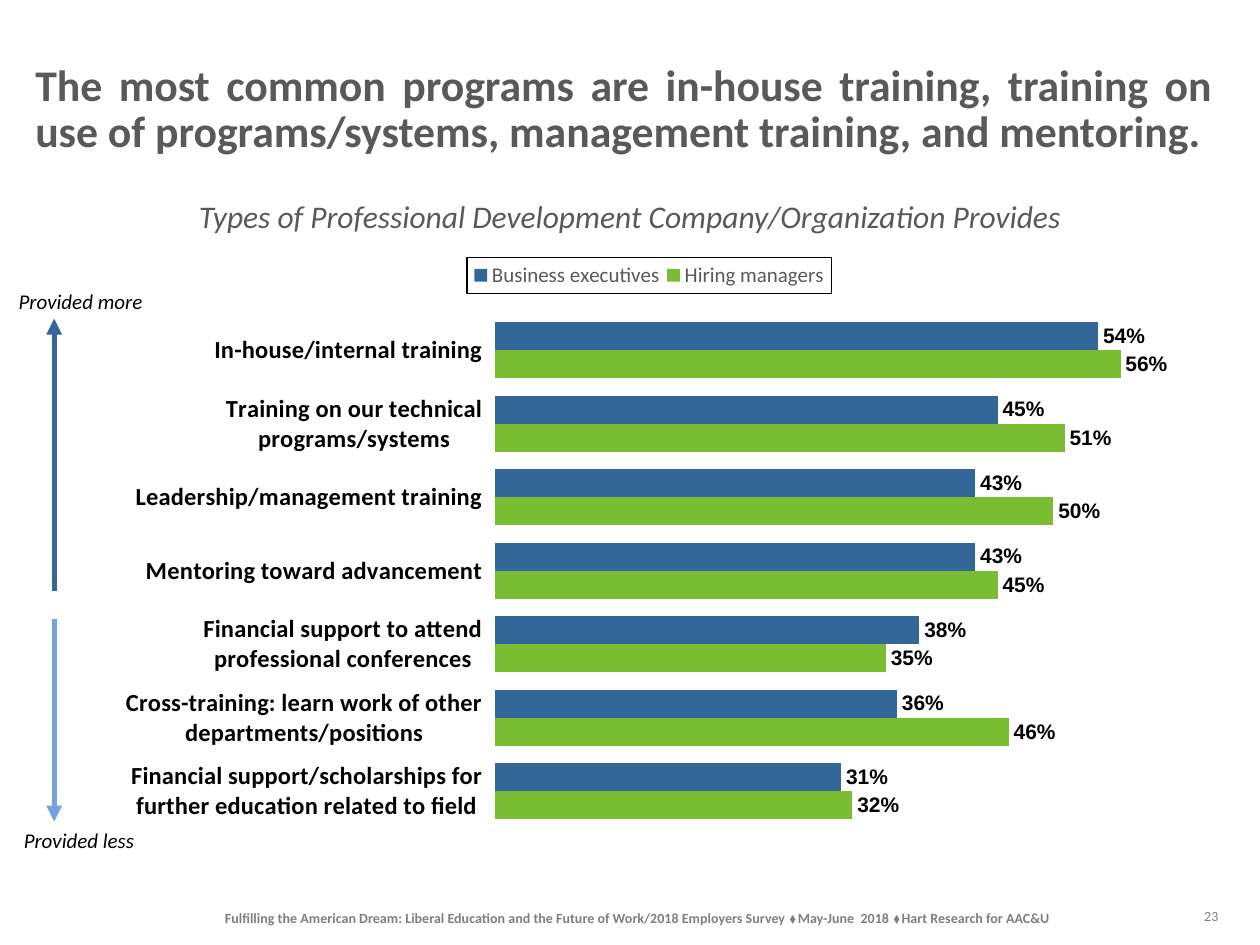
"""Build the slide on types of professional development that employers provide."""
from dataclasses import dataclass

from lxml import etree
from pptx import Presentation
from pptx.chart.data import CategoryChartData
from pptx.dml.color import RGBColor
from pptx.enum.chart import XL_CHART_TYPE, XL_LABEL_POSITION, XL_LEGEND_POSITION, XL_TICK_MARK
from pptx.enum.shapes import MSO_CONNECTOR
from pptx.enum.text import MSO_ANCHOR, PP_ALIGN
from pptx.oxml import parse_xml
from pptx.oxml.ns import nsdecls, qn
from pptx.util import Inches, Pt

BAR = XL_CHART_TYPE.BAR_CLUSTERED
OUTSIDE = XL_LABEL_POSITION.OUTSIDE_END
TOP = XL_LEGEND_POSITION.TOP
TICK_OUT = XL_TICK_MARK.OUTSIDE
STRAIGHT = MSO_CONNECTOR.STRAIGHT
TOP_ANCHOR, MIDDLE = MSO_ANCHOR.TOP, MSO_ANCHOR.MIDDLE
LEFT, CENTER, RIGHT, JUSTIFY = PP_ALIGN.LEFT, PP_ALIGN.CENTER, PP_ALIGN.RIGHT, PP_ALIGN.JUSTIFY


@dataclass(frozen=True)
class Theme:
    """Fonts, colours and type sizes of the slide."""
    body_font: str = "Calibri"
    value_font: str = "Arial"
    black: str = "000000"
    heading: str = "595959"
    footer: str = "7F7F7F"
    number: str = "808080"
    executives: str = "336699"
    managers: str = "7ABC32"
    less: str = "76A1E0"
    title_size: int = 25
    subtitle_size: int = 18
    category_size: int = 14
    label_size: int = 12
    footer_size: int = 8


THEME = Theme()


@dataclass(frozen=True)
class Label:
    """A one-paragraph text box."""
    text: str
    box: tuple[float, float, float, float]
    size: int
    color: str
    bold: bool = False
    italic: bool = False
    align: PP_ALIGN = LEFT
    anchor: MSO_ANCHOR = TOP_ANCHOR
    insets: tuple[float, float] = (0.1, 0.05)
    line_points: int | None = None
    wrap: bool = True


@dataclass(frozen=True)
class Arrow:
    """A vertical arrow pointing from start to end."""
    x: float
    start: float
    end: float
    color: str


@dataclass(frozen=True)
class Series:
    """One group of respondents."""
    name: str
    color: str
    values: tuple[float, ...]


TIGHT = (0.07, 0.04)
LABELS = (
    Label("Fulfilling the American Dream: Liberal Education and the Future of Work/2018 Employers Survey "
          "⬧ May-June  2018 ⬧ Hart Research for AAC&U", (1.15, 7.18, 7.83, 0.21),
          THEME.footer_size, THEME.footer, bold=True, align=CENTER, insets=TIGHT),
    Label("The most common programs are in-house training, training on use of programs/systems, "
          "management training, and mentoring.", (0.21, 0.15, 9.48, 1.45), THEME.title_size, THEME.heading,
          bold=True, align=JUSTIFY, anchor=MIDDLE, insets=TIGHT, line_points=26),
    Label("23", (9.12, 7.07, 0.62, 0.4), THEME.footer_size, THEME.number,
          align=RIGHT, anchor=MIDDLE, insets=TIGHT),
    Label("Types of Professional Development Company/Organization Provides", (0.44, 1.54, 9.12, 0.38),
          THEME.subtitle_size, THEME.heading, italic=True, align=CENTER, line_points=20),
    Label("Provided more", (0.05, 2.24, 1.2, 0.3), THEME.label_size, THEME.black, italic=True, wrap=False),
    Label("Provided less", (0.09, 6.52, 1.09, 0.3), THEME.label_size, THEME.black, italic=True, wrap=False),
)
ARROWS = (Arrow(0.43, 4.69, 2.53, THEME.executives), Arrow(0.43, 4.91, 6.52, THEME.less))
CATEGORIES = (
    "Financial support/scholarships for further education related to field",
    "Cross-training: learn work of other departments/positions",
    "Financial support to attend professional conferences",
    "Mentoring toward advancement",
    "Leadership/management training",
    "Training on our technical programs/systems",
    "In-house/internal training",
)
SERIES = (
    Series("Hiring managers", THEME.managers, (0.32, 0.46, 0.35, 0.45, 0.5, 0.51, 0.56)),
    Series("Business executives", THEME.executives, (0.31, 0.36, 0.38, 0.43, 0.43, 0.45, 0.54)),
)


def style_font(font, size: int, color: str, bold: bool = False, italic: bool = False,
               name: str = THEME.body_font) -> None:
    """Set every visible property of a font."""
    font.name, font.size, font.bold, font.italic = name, Pt(size), bold, italic
    font.color.rgb = RGBColor.from_string(color)


def add_label(slide, label: Label) -> None:
    """Add a text box with one run."""
    frame = slide.shapes.add_textbox(*map(Inches, label.box)).text_frame
    frame.word_wrap, frame.vertical_anchor = label.wrap, label.anchor
    frame.margin_left = frame.margin_right = Inches(label.insets[0])
    frame.margin_top = frame.margin_bottom = Inches(label.insets[1])
    paragraph = frame.paragraphs[0]
    paragraph.alignment = label.align
    if label.line_points:
        paragraph.line_spacing = Pt(label.line_points)
    run = paragraph.add_run()
    run.text = label.text
    style_font(run.font, label.size, label.color, label.bold, label.italic)


def add_arrow(slide, arrow: Arrow) -> None:
    """Add a vertical line with a triangle at its end."""
    connector = slide.shapes.add_connector(
        STRAIGHT, Inches(arrow.x), Inches(arrow.start), Inches(arrow.x), Inches(arrow.end))
    connector.line.width = Pt(3)
    connector.line.color.rgb = RGBColor.from_string(arrow.color)
    etree.SubElement(connector.line._get_or_add_ln(), qn("a:tailEnd"), type="triangle")
    etree.SubElement(connector._element.spPr, qn("a:effectLst"))


def make_layout(x: float, y: float, w: float, h: float, inner: bool = False):
    """Return a manual chart layout in fractions of the chart."""
    target = '<c:layoutTarget val="inner"/>' if inner else ""
    sizes = "".join(f'<c:{tag} val="{value}"/>' for tag, value in zip("xywh", (x, y, w, h)))
    return parse_xml(f'<c:layout {nsdecls("c")}><c:manualLayout>{target}<c:xMode val="edge"/>'
                     f'<c:yMode val="edge"/>{sizes}</c:manualLayout></c:layout>')


def place_legend(chart) -> None:
    """Put a framed legend above the bars."""
    chart.has_legend = True
    legend = chart.legend
    legend.position, legend.include_in_layout = TOP, False
    style_font(legend.font, THEME.label_size, THEME.heading)
    element = legend._element
    for layout in element.findall(qn("c:layout")):
        element.remove(layout)
    element.find(qn("c:legendPos")).addnext(make_layout(0.33, 0.015, 0.34, 0.06))
    element.find(qn("c:overlay")).addnext(parse_xml(
        f'<c:spPr {nsdecls("c", "a")}><a:ln w="9525"><a:solidFill><a:srgbClr val="{THEME.black}"/>'
        '</a:solidFill></a:ln></c:spPr>'))


def add_bar_chart(slide) -> None:
    """Add the clustered bars with value labels."""
    data = CategoryChartData(number_format="0%")
    data.categories = CATEGORIES
    for series in SERIES:
        data.add_series(series.name, series.values)
    chart = slide.shapes.add_chart(BAR, *map(Inches, (0.88, 1.97, 8.53, 4.76)), data).chart
    style_font(chart.font, THEME.subtitle_size, THEME.black)
    chart.has_title = False
    place_legend(chart)
    plot_area = chart._chartSpace.chart.plotArea
    for layout in plot_area.findall(qn("c:layout")):
        plot_area.remove(layout)
    plot_area.insert(0, make_layout(0.356, 0.109, 0.625, 0.858, inner=True))
    category_axis, value_axis = chart.category_axis, chart.value_axis
    category_axis.major_tick_mark = TICK_OUT
    category_axis.format.line.fill.background()
    style_font(category_axis.tick_labels.font, THEME.category_size, THEME.black, bold=True)
    value_axis.minimum_scale, value_axis.maximum_scale = 0, 0.6
    value_axis.has_major_gridlines = value_axis.visible = False
    plot = chart.plots[0]
    plot.gap_width, plot.overlap, plot.vary_by_categories = 61, 0, False
    for series, bars in zip(SERIES, plot.series):
        bars.format.fill.solid()
        bars.format.fill.fore_color.rgb = RGBColor.from_string(series.color)
        labels = bars.data_labels
        labels.show_value, labels.position = True, OUTSIDE
        labels.number_format, labels.number_format_is_linked = "0%", False
        style_font(labels.font, THEME.label_size, THEME.black, bold=True, name=THEME.value_font)


def main() -> None:
    """Build and save the presentation."""
    presentation = Presentation()
    presentation.slide_width, presentation.slide_height = Inches(10), Inches(7.5)
    slide = presentation.slides.add_slide(presentation.slide_layouts[6])
    add_bar_chart(slide)
    for arrow in ARROWS:
        add_arrow(slide, arrow)
    for label in LABELS:
        add_label(slide, label)
    presentation.save("out.pptx")


if __name__ == "__main__":
    main()
